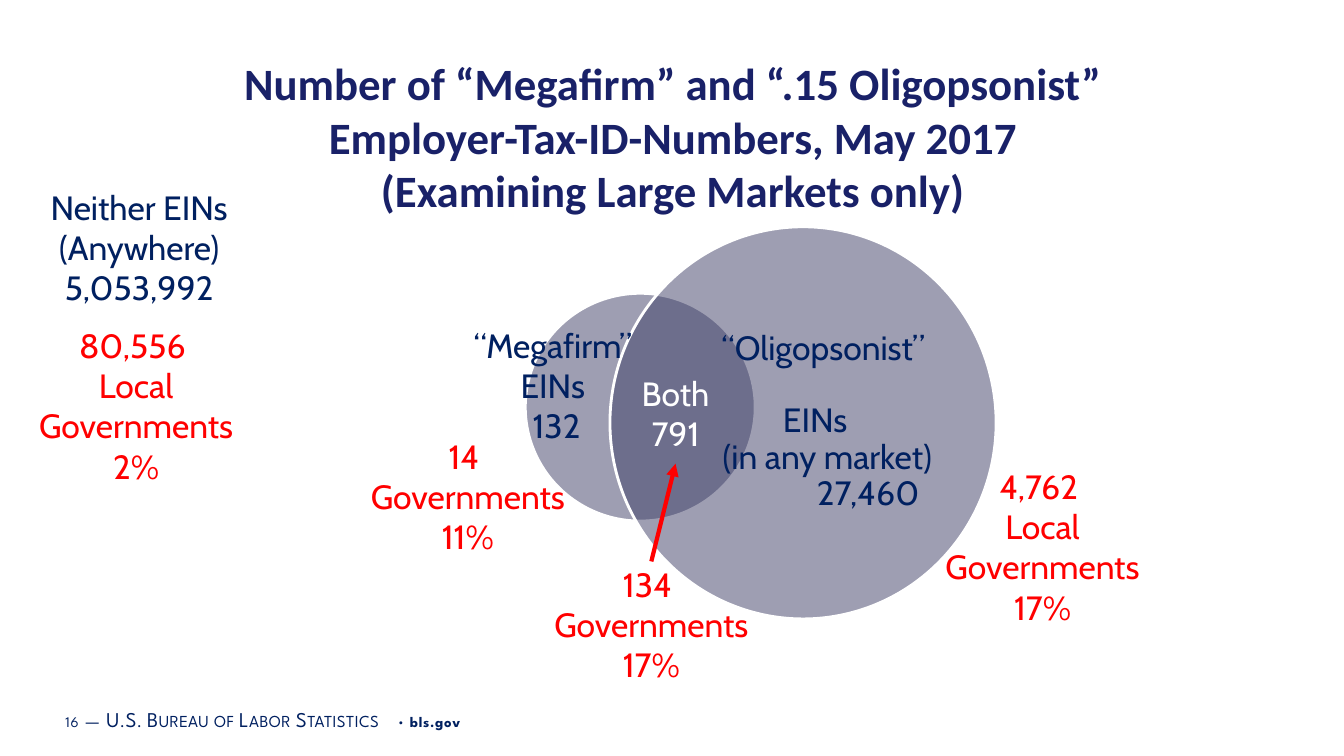
from lxml.etree import SubElement
from pptx import Presentation
from pptx.dml.color import RGBColor
from pptx.enum.shapes import MSO_CONNECTOR, MSO_SHAPE
from pptx.enum.text import MSO_ANCHOR, MSO_AUTO_SIZE, PP_ALIGN
from pptx.oxml.ns import qn
from pptx.util import Inches, Pt

NAVY = "002060"
TITLE_BLUE = "192168"
CIRCLE_BLUE = "3E3F67"
RED = "FF0000"
WHITE = "FFFFFF"
LABEL_WIDTH = 2.4


def color(value):
    return RGBColor.from_string(value)


def add_span(para, text, font="Cabin", size=24, fill=NAVY, bold=False,
             spacing=None, small_caps=False):
    span = para.add_run()
    span.text = text
    span.font.name = font
    span.font.size = Pt(size)
    span.font.bold = bold
    span.font.color.rgb = color(fill)
    properties = span.font._element
    if spacing is not None:
        properties.set("spc", str(round(spacing * 100)))
    if small_caps:
        properties.set("cap", "small")


def add_lines(frame, lines, line_spacing=None, **style):
    """Write one centred paragraph per line."""
    paras = []
    for index, line in enumerate(lines):
        para = frame.add_paragraph() if index else frame.paragraphs[0]
        para.alignment = PP_ALIGN.CENTER
        if line_spacing:
            para.line_spacing = line_spacing
        add_span(para, line, **style)
        paras.append(para)
    return paras


def add_box(shapes, left, top, width, height, margins=(0.1, 0.05)):
    box = shapes.add_textbox(Inches(left), Inches(top), Inches(width), Inches(height))
    frame = box.text_frame
    frame.word_wrap = True
    frame.vertical_anchor = MSO_ANCHOR.MIDDLE
    frame.margin_left = frame.margin_right = Inches(margins[0])
    frame.margin_top = frame.margin_bottom = Inches(margins[1])
    return frame


def add_label(shapes, center_x, center_y, lines, fill):
    height = 0.4 * len(lines) + 0.1
    frame = add_box(shapes, center_x - LABEL_WIDTH / 2, center_y - height / 2,
                    LABEL_WIDTH, height)
    add_lines(frame, lines, fill=fill)


def add_circle(shapes, left, top, width, height):
    circle = shapes.add_shape(MSO_SHAPE.OVAL, Inches(left), Inches(top),
                              Inches(width), Inches(height))
    circle.shadow.inherit = False
    circle.fill.solid()
    circle.fill.fore_color.rgb = color(CIRCLE_BLUE)
    solid = circle._element.spPr.find(qn("a:solidFill"))
    SubElement(solid[0], qn("a:alpha"), val="50000")
    circle.line.color.rgb = color(WHITE)
    circle.line.width = Pt(2)


def add_arrow(shapes, start, end):
    arrow = shapes.add_connector(MSO_CONNECTOR.STRAIGHT, *map(Inches, start + end))
    arrow.line.color.rgb = color(RED)
    arrow.line.width = Pt(3)
    properties = arrow._element.spPr
    SubElement(properties.find(qn("a:ln")), qn("a:tailEnd"), type="triangle")
    SubElement(properties, qn("a:effectLst"))


def add_title(slide):
    title = slide.shapes.title
    title.left, title.top = Inches(1.85), Inches(0.5)
    title.width, title.height = Inches(9.65), Inches(0.88)
    frame = title.text_frame
    frame.auto_size = MSO_AUTO_SIZE.NONE
    frame.vertical_anchor = MSO_ANCHOR.TOP
    add_lines(frame, [
        "Number of “Megafirm” and “.15 Oligopsonist” Employer-Tax-ID-Numbers, May 2017",
        "(Examining Large Markets only)",
    ], font="Calibri", size=32, fill=TITLE_BLUE, bold=True)


def add_footer(slide):
    para = add_box(slide.shapes, 0.58, 6.93, 8.44, 0.4, margins=(0.07, 0.04)).paragraphs[0]
    for text, size, spacing, small_caps, bold in [
        ("16", 10.5, 0.5, False, False),
        (" ", 16, 0.5, False, False),
        ("—", 15, 0.3, True, False),
        (" ", 16, 0.5, False, False),
        ("U.S. Bureau of Labor Statistics", 15, 0.3, True, False),
        (" • ", 10.5, 0.5, False, False),
        ("bls.gov", 10.5, 0.5, False, True),
    ]:
        add_span(para, text, font="League Spartan", size=size, spacing=spacing,
                 small_caps=small_caps, bold=bold)


def add_venn(slide):
    shapes = slide.shapes.add_group_shape().shapes
    add_circle(shapes, 5.21, 2.91, 2.28, 2.26)
    add_circle(shapes, 6.05, 2.25, 3.83, 3.89)
    frame = add_box(shapes, 7.13, 2.7, 2.21, 2.97, margins=(0, 0))
    paras = add_lines(frame, ["“Oligopsonist”", "EINs", "(in any market)", "27,460"],
                      line_spacing=0.9)
    paras[1].space_before = Pt(26)
    # Side margins shift the centred lines
    for para, side, margin in zip(paras, ["marR", "marR", "marR", "marL"],
                                  [0.14, 0.3, 0.06, 0.81]):
        para._p.get_or_add_pPr().set(side, str(Inches(margin)))


def main():
    deck = Presentation()
    deck.slide_width, deck.slide_height = Inches(13.33), Inches(7.5)
    slide = deck.slides.add_slide(deck.slide_layouts[5])

    add_footer(slide)
    add_title(slide)
    add_venn(slide)

    # Counts and government shares, placed by their centres
    for center_x, center_y, lines, fill in [
        (6.7, 4.1, ["Both", "791"], WHITE),
        (1.35, 4.02, ["80,556 ", "Local", "Governments", "2%"], RED),
        (5.52, 3.82, ["“Megafirm” ", "EINs ", "132"], NAVY),
        (6.46, 6.19, ["134 ", "Governments", "17%"], RED),
        (4.64, 4.92, ["14 ", "Governments", "11%"], RED),
        (10.34, 5.42, ["4,762 ", "Local", "Governments", "17%"], RED),
        (1.38, 2.45, ["Neither EINs", "(Anywhere)", "5,053,992"], NAVY),
    ]:
        add_label(slide.shapes, center_x, center_y, lines, fill)
    add_arrow(slide.shapes, (6.46, 5.57), (6.7, 4.6))

    deck.save("out.pptx")


if __name__ == "__main__":
    main()
